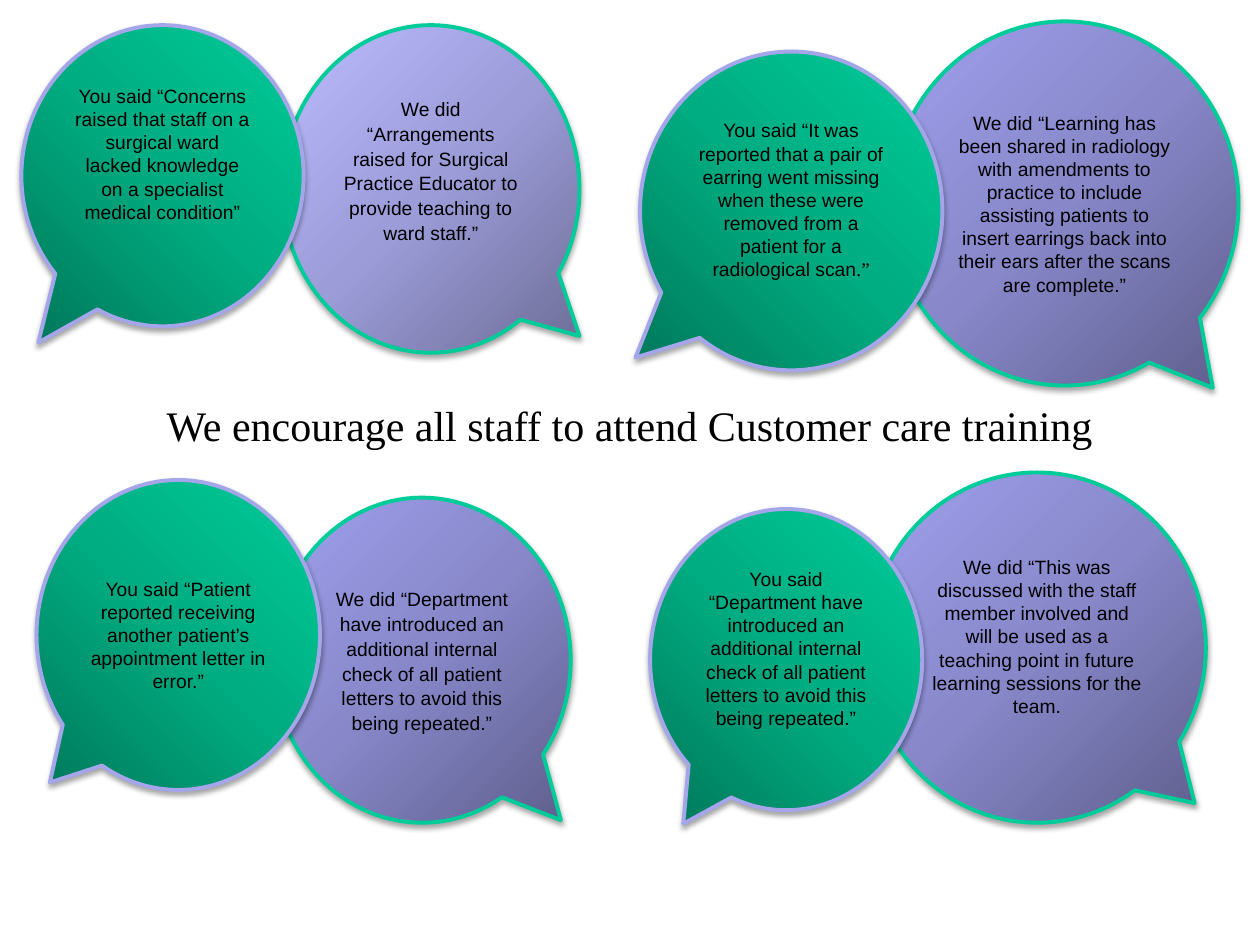
"""Build a slide of paired "You said" and "We did" speech bubbles around a training message."""
import pptx
import pptx.dml.color
import pptx.enum.shapes
import pptx.enum.text
import pptx.oxml
import pptx.oxml.ns
import pptx.util

Inches = pptx.util.Inches
Pt = pptx.util.Pt
CENTER = pptx.enum.text.PP_ALIGN.CENTER


def color(hex_value):
    return pptx.dml.color.RGBColor.from_string(hex_value)


def style_bubble(bubble, stops, focus, outline):
    ns = pptx.oxml.ns.nsdecls("a")
    stop_xml = "".join(
        f'<a:gs pos="{position}"><a:srgbClr val="{value}"/></a:gs>'
        for position, value in zip((0, 50000, 100000), stops)
    )
    bubble.fill.background()
    bubble.line.color.rgb = color(outline)
    bubble.line.width = Pt(2.25)
    properties = bubble.fill._xPr
    no_fill = properties.find(pptx.oxml.ns.qn("a:noFill"))
    properties.replace(no_fill, pptx.oxml.parse_xml(
        f'<a:gradFill {ns} rotWithShape="1"><a:gsLst>{stop_xml}</a:gsLst>'
        f'<a:path path="circle"><a:fillToRect {focus}/></a:path></a:gradFill>'
    ))
    properties.append(pptx.oxml.parse_xml(
        f'<a:effectLst {ns}><a:outerShdw blurRad="{Pt(3.1)}" dist="{Pt(1.8)}" dir="5400000" '
        'rotWithShape="0"><a:srgbClr val="000000"><a:alpha val="35000"/></a:srgbClr>'
        '</a:outerShdw></a:effectLst>'
    ))


RIGHT_FOCUS = 'l="100000" t="100000" r="0" b="0"'
LEFT_FOCUS = 'l="0" t="100000" r="100000" b="0"'
STYLES = {
    "said": (("00795B", "00AC81", "00CC99"), LEFT_FOCUS, "A5A5E9"),
    "did": (("5F5F8D", "8787C9", "A0A0EE"), RIGHT_FOCUS, "00CC99"),
    "did_light": (("6E6E98", "9C9CD9", "BBBBFF"), RIGHT_FOCUS, "00CC99"),
}

BUBBLES = [
    ("did", (6.89, 3.75, 2.68, 2.78), (0.467, 0.444), 1, 0.23,
     "We did “This was discussed with the staff member involved and will be used as a "
     "teaching point in future learning sessions for the team."),
    ("did", (2.17, 3.95, 2.36, 2.58), (0.467, 0.492), 1.07, 0.05,
     "We did “Department have introduced an additional internal check of all patient "
     "letters to avoid this being repeated.”"),
    ("said", (0.29, 3.81, 2.25, 2.46), (-0.453, 0.476), 1, 0.05,
     "You said “Patient reported receiving another patient’s appointment letter in error.”"),
    ("did_light", (2.24, 0.2, 2.36, 2.6), (0.5, 0.449), 1.07, 0.35,
     "We did “Arrangements raised for Surgical Practice Educator to provide teaching to "
     "ward staff.”"),
    ("did", (7.07, 0.17, 2.76, 2.89), (0.426, 0.506), 1, 0.05,
     "We did “Learning has been shared in radiology with amendments to practice to include "
     "assisting patients to insert earrings back into their ears after the scans are complete.”"),
    ("said", (5.16, 4.04, 2.16, 2.39), (-0.378, 0.545), 1, 0.23,
     "You said “Department have introduced an additional internal check of all patient "
     "letters to avoid this being repeated.”"),
    ("said", (5.08, 0.41, 2.4, 2.53), (-0.515, 0.46), 1, 0.23,
     "You said “It was reported that a pair of earring went missing when these were "
     "removed from a patient for a radiological scan"),
    ("said", (0.17, 0.2, 2.24, 2.39), (-0.44, 0.554), 1, 0.4,
     "You said “Concerns raised that staff on a surgical ward lacked knowledge on a "
     "specialist medical condition”"),
]

presentation = pptx.Presentation()
presentation.slide_width = Inches(10)
presentation.slide_height = Inches(7.5)
slide = presentation.slides.add_slide(presentation.slide_layouts[6])

for style, place, tail, line_spacing, bottom_margin, words in BUBBLES:
    bubble = slide.shapes.add_shape(
        pptx.enum.shapes.MSO_SHAPE.OVAL_CALLOUT, *map(Inches, place))
    bubble.adjustments[0], bubble.adjustments[1] = tail
    style_bubble(bubble, *STYLES[style])

    frame = bubble.text_frame
    frame.word_wrap = True
    frame.vertical_anchor = pptx.enum.text.MSO_ANCHOR.MIDDLE
    frame.margin_bottom = Inches(bottom_margin)
    frame.text = words
    statement = frame.paragraphs[0]
    statement.alignment = CENTER
    if line_spacing != 1:
        statement.line_spacing = line_spacing
        statement.space_after = Pt(8)
    if words.endswith("radiological scan"):
        statement.add_run().text = ".”"
    for run, font_name in zip(statement.runs, ("Arial", "Times New Roman")):
        run.font.name = font_name
        run.font.size = Pt(11)
        run.font.color.rgb = color("000000")

message = slide.shapes.add_textbox(Inches(0.75), Inches(3.12), Inches(8.5), Inches(0.5))
message.text_frame.word_wrap = True
message.text_frame.text = "We encourage all staff to attend Customer care training"
message_line = message.text_frame.paragraphs[0]
message_line.alignment = CENTER
message_font = message_line.runs[0].font
message_font.name = "Times New Roman"
message_font.size = Pt(24)
message_font.color.rgb = color("000000")

presentation.save("out.pptx")
